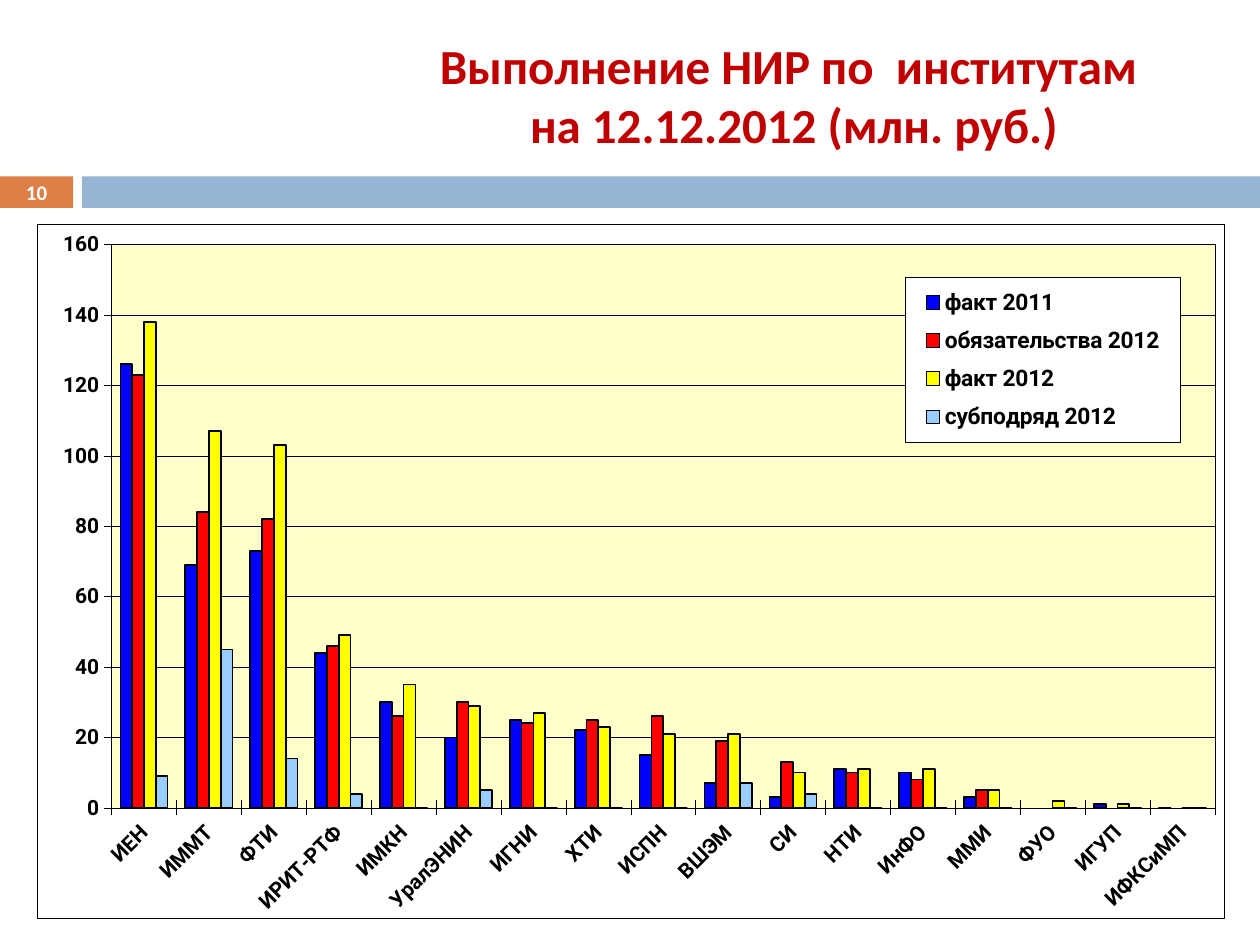
import pptx
import pptx.chart.data
import pptx.dml.color
import pptx.enum.chart
import pptx.enum.shapes
import pptx.enum.text
import pptx.oxml
import pptx.oxml.ns
import pptx.util

COLORS = {
    "title": "C00000", "orange": "DD8047", "band": "94B6D2", "white": "FFFFFF",
    "black": "000000", "plot": "FFFFCC",
}
CATEGORIES = ["ИЕН", " ИММТ", "ФТИ", "ИРИТ-РТФ", "ИМКН", "УралЭНИН", "ИГНИ", "ХТИ", "ИСПН",
              "ВШЭМ", "СИ", "НТИ", "ИнФО", "ММИ", "ФУО", "ИГУП", "ИФКСиМП"]
SERIES = [
    ("факт 2011", "0000FF",
     [126, 69, 73, 44, 30, 20, 25, 22, 15, 7, 3, 11, 10, 3, None, 1, 0]),
    ("обязательства 2012", "FF0000",
     [123, 84, 82, 46, 26, 30, 24, 25, 26, 19, 13, 10, 8, 5, None, None, None]),
    ("факт 2012", "FFFF00",
     [138, 107, 103, 49, 35, 29, 27, 23, 21, 21, 10, 11, 11, 5, 2, 1, 0]),
    ("субподряд 2012 ", "99CCFF",
     [9, 45, 14, 4, 0, 5, 0, 0, 0, 7, 4, 0, 0, 0, 0, 0, 0]),
]
Inches, Pt = pptx.util.Inches, pptx.util.Pt
rgb = pptx.dml.color.RGBColor.from_string
qn = pptx.oxml.ns.qn


def write(shape, text, size, color):
    """Fill the shape with bold, centred Calibri; newlines become line breaks."""
    tf = shape.text_frame
    tf.word_wrap = True
    tf.vertical_anchor = pptx.enum.text.MSO_ANCHOR.MIDDLE
    tf.margin_top = tf.margin_bottom = 0
    p = tf.paragraphs[0]
    p.alignment = pptx.enum.text.PP_ALIGN.CENTER
    for i, line in enumerate(text.split("\n")):
        if i:
            p.add_line_break()
        r = p.add_run()
        r.text = line
        r.font.name, r.font.size, r.font.bold = "Calibri", Pt(size), True
        r.font.color.rgb = rgb(COLORS[color])


def chart_part(tag, body):
    return pptx.oxml.parse_xml(
        f'<c:{tag} xmlns:c="http://schemas.openxmlformats.org/drawingml/2006/chart" '
        f'xmlns:a="http://schemas.openxmlformats.org/drawingml/2006/main">{body}</c:{tag}>')


prs = pptx.Presentation()
prs.slide_width, prs.slide_height = Inches(10), Inches(7.5)
W, H = prs.slide_width, prs.slide_height
s = prs.slides.add_slide(prs.slide_layouts[5])

# Title and the band with the slide number
title = s.shapes.title
title.left, title.top = int(W * 0.26), Inches(0.21)
title.width, title.height = int(W * 0.74), Inches(1.08)
write(title, "Выполнение НИР по  институтам \nна 12.12.2012 (млн. руб.)", 28, "title")

band_top, band_height, number_width, band_left = Inches(1.4), Inches(0.25), Inches(0.58), Inches(0.65)
for left, width, color in ((0, number_width, "orange"), (band_left, W - band_left, "band")):
    sp = s.shapes.add_shape(pptx.enum.shapes.MSO_SHAPE.RECTANGLE, left, band_top, width, band_height)
    sp.shadow.inherit = False
    sp.fill.solid()
    sp.fill.fore_color.rgb = rgb(COLORS[color])
    sp.line.fill.background()
number = s.shapes.add_textbox(0, Inches(1.39), number_width, Inches(0.27))
write(number, "10", 11.9, "white")

# Chart
data = pptx.chart.data.CategoryChartData(number_format="0")
data.categories = CATEGORIES
for name, color, values in SERIES:
    data.add_series(name, values)
chart = s.shapes.add_chart(pptx.enum.chart.XL_CHART_TYPE.COLUMN_CLUSTERED, Inches(0.29), Inches(1.78),
                           Inches(9.43), Inches(5.51), data).chart
chart.has_title = False
chart.font.name, chart.font.size, chart.font.bold = "Roboto", Pt(11), True
chart.font.color.rgb = rgb(COLORS["black"])

plot = chart.plots[0]
plot.vary_by_categories = False
plot.gap_width, plot.overlap = 150, 0
for series, (name, color, values) in zip(plot.series, SERIES):
    series.invert_if_negative = False
    series.format.fill.solid()
    series.format.fill.fore_color.rgb = rgb(color)
    series.format.line.color.rgb = rgb(COLORS["black"])
    series.format.line.width = Pt(1)

cat_axis, val_axis = chart.category_axis, chart.value_axis
val_axis.minimum_scale, val_axis.maximum_scale, val_axis.major_unit = 0, 160, 20
val_axis.has_major_gridlines = True
val_axis.tick_labels.number_format = "0"
val_axis.tick_labels.number_format_is_linked = False
for axis in (cat_axis, val_axis):
    axis.major_tick_mark = pptx.enum.chart.XL_TICK_MARK.CROSS
    axis.tick_labels.font.size = Pt(12)
for line in (cat_axis.format.line, val_axis.format.line, val_axis.major_gridlines.format.line):
    line.color.rgb = rgb(COLORS["black"])
    line.width = Pt(0.25)
label_body = cat_axis._element.find(qn("c:txPr")).find(qn("a:bodyPr"))
label_body.set("rot", "-2700000")
label_body.set("vert", "horz")

chart.has_legend = True
legend = chart.legend
legend.position = pptx.enum.chart.XL_LEGEND_POSITION.RIGHT
legend.include_in_layout = False
legend.font.size = Pt(13)

# Manual layout, backgrounds and borders
plot_area = chart._chartSpace.chart.plotArea
for area, target, box in ((plot_area, '<c:layoutTarget val="inner"/>', (0.063, 0.029, 0.929, 0.812)),
                          (legend._element, "", (0.731, 0.076, 0.232, 0.238))):
    for old in area.findall(qn("c:layout")):
        area.remove(old)
    modes = '<c:xMode val="edge"/><c:yMode val="edge"/>'
    sizes = "".join(f'<c:{key} val="{value}"/>' for key, value in zip("xywh", box))
    layout = chart_part("layout", f"<c:manualLayout>{target}{modes}{sizes}</c:manualLayout>")
    area.insert(0 if area is plot_area else 1, layout)

for before, color in ((chart._chartSpace.chart, "white"), (plot_area[-1], "plot"),
                      (legend._element.find(qn("c:overlay")), "white")):
    before.addnext(chart_part("spPr", (
        f'<a:solidFill><a:srgbClr val="{COLORS[color]}"/></a:solidFill><a:ln w="3175">'
        f'<a:solidFill><a:srgbClr val="{COLORS["black"]}"/></a:solidFill></a:ln>')))

prs.save("out.pptx")
